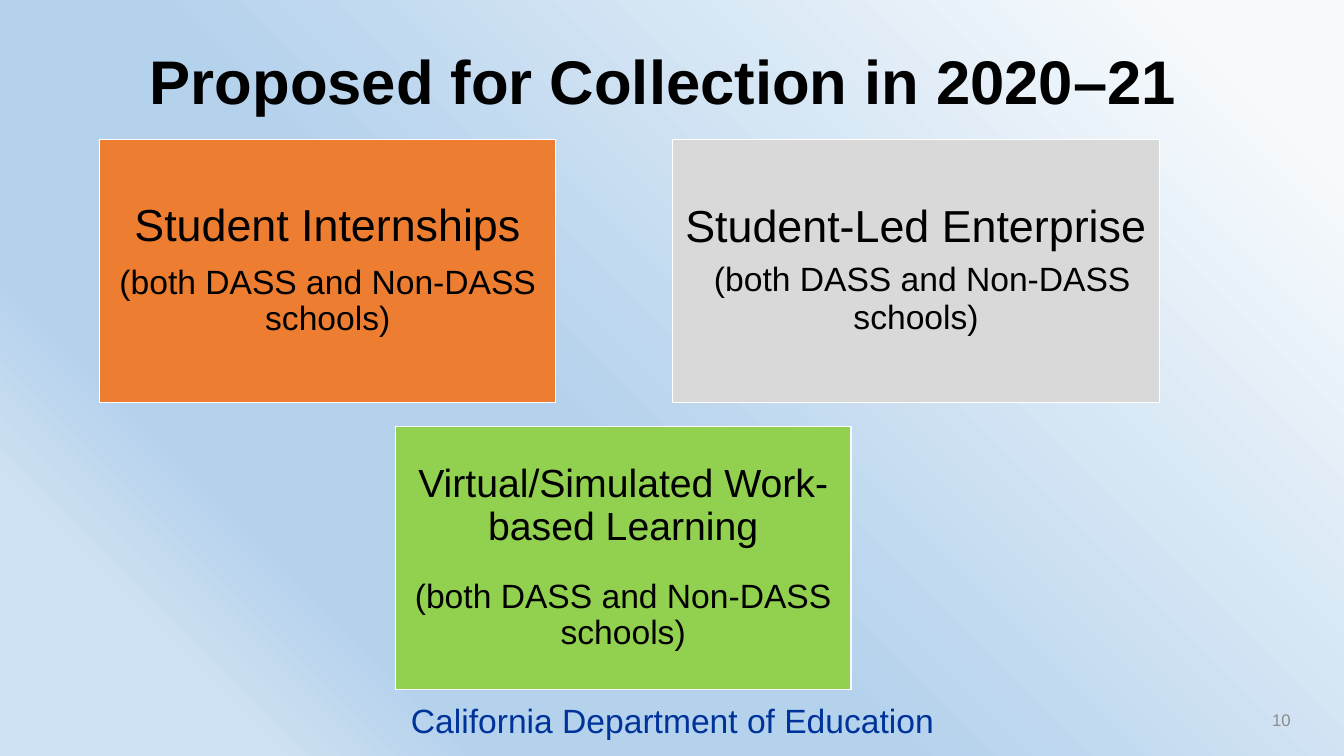
from lxml.etree import SubElement
from pptx import Presentation
from pptx.dml.color import RGBColor
from pptx.enum.shapes import MSO_SHAPE
from pptx.enum.text import MSO_ANCHOR, PP_ALIGN
from pptx.oxml.ns import qn
from pptx.util import Inches, Pt

SLIDE_WIDTH, SLIDE_HEIGHT = Inches(13.33), Inches(7.5)
COLORS = {
    "black": "000000",
    "white": "FFFFFF",
    "orange": "ED7D31",
    "gray": "D9D9D9",
    "green": "92D050",
    "navy": "003399",
    "page_number": "8C8C8C",
    "sky_pale": "F7FAFD",
    "sky": "B5D2EC",
    "sky_light": "CEE1F2",
}
BACKGROUND_STOPS = [(8, "sky_pale"), (57, "sky"), (77, "sky"), (87, "sky_light")]
CARD_WIDTH, CARD_HEIGHT = 33.91, 34.8
CARD_TOP, LOWER_CARD_TOP = 18.4, 56.4
FOOTER_TOP, FOOTER_HEIGHT = 92.6, 5.33
SCHOOLS = "(both DASS and Non-DASS schools)"


def rgb(name):
    return RGBColor.from_string(COLORS[name])


def share(left, top, width, height):
    """Turn percentages of the slide into lengths."""
    return (
        int(SLIDE_WIDTH * left / 100),
        int(SLIDE_HEIGHT * top / 100),
        int(SLIDE_WIDTH * width / 100),
        int(SLIDE_HEIGHT * height / 100),
    )


def paint_background(slide):
    fill = slide.background.fill
    fill.gradient()
    fill.gradient_angle = 225
    stop_list = next(slide.element.iter(qn("a:gsLst")))
    for stop in list(stop_list):
        stop_list.remove(stop)
    for percent, color in BACKGROUND_STOPS:
        stop = SubElement(stop_list, qn("a:gs"), pos=str(percent * 1000))
        SubElement(stop, qn("a:srgbClr"), val=COLORS[color])


def add_run(paragraph, text, size, color="black", bold=False):
    """Add a run; each newline in the text becomes a line break."""
    for index, line in enumerate(text.split("\n")):
        if index:
            paragraph.add_line_break()
        run = paragraph.add_run()
        run.text = line
        run.font.name = "Arial"
        run.font.size = Pt(size)
        run.font.bold = bold
        run.font.color.rgb = rgb(color)


def write(shape, *paragraphs, align=PP_ALIGN.CENTER, line_spacing=0.9,
          gap=0, **font_format):
    """Fill a shape with paragraphs, each a list of (text, size) runs."""
    frame = shape.text_frame
    frame.word_wrap = True
    frame.vertical_anchor = MSO_ANCHOR.MIDDLE
    for index, runs in enumerate(paragraphs):
        paragraph = frame.add_paragraph() if index else frame.paragraphs[0]
        paragraph.alignment = align
        paragraph.line_spacing = line_spacing
        if index:
            paragraph.space_before = Pt(gap)
        for text, size in runs:
            add_run(paragraph, text, size, **font_format)


def add_label(slide, area, text, size, **text_format):
    write(slide.shapes.add_textbox(*share(*area)), [(text, size)], **text_format)


def add_card(slide, left, top, color, *paragraphs, width=CARD_WIDTH, gap=10):
    card = slide.shapes.add_shape(
        MSO_SHAPE.RECTANGLE, *share(left, top, width, CARD_HEIGHT))
    card.shadow.inherit = False
    card.fill.solid()
    card.fill.fore_color.rgb = rgb(color)
    card.line.color.rgb = rgb("white")
    card.line.width = Pt(0.75)
    write(card, *paragraphs, gap=gap)


def main():
    presentation = Presentation()
    presentation.slide_width, presentation.slide_height = SLIDE_WIDTH, SLIDE_HEIGHT
    slide = presentation.slides.add_slide(presentation.slide_layouts[6])
    paint_background(slide)

    add_label(slide, (4.43, 1.87, 91.22, 18.53),
              "Proposed for Collection in 2020–21 ", 44, bold=True)
    add_card(slide, 7.43, CARD_TOP, "orange",
             [("Student Internships", 32)], [(SCHOOLS, 24)])
    add_card(slide, 50.04, CARD_TOP, "gray",
             [("Student-Led Enterprise\n ", 32), (SCHOOLS, 24)], width=36.23)
    add_card(slide, 29.41, LOWER_CARD_TOP, "green",
             [("Virtual/Simulated Work-based Learning", 28)], [(SCHOOLS, 24)],
             gap=22)
    add_label(slide, (29.48, FOOTER_TOP, 41.11, FOOTER_HEIGHT),
              "California Department of Education", 24,
              color="navy", line_spacing=1)
    add_label(slide, (74.27, FOOTER_TOP, 22.51, FOOTER_HEIGHT), "10", 12,
              color="page_number", align=PP_ALIGN.RIGHT, line_spacing=1)

    presentation.save("out.pptx")


if __name__ == "__main__":
    main()
